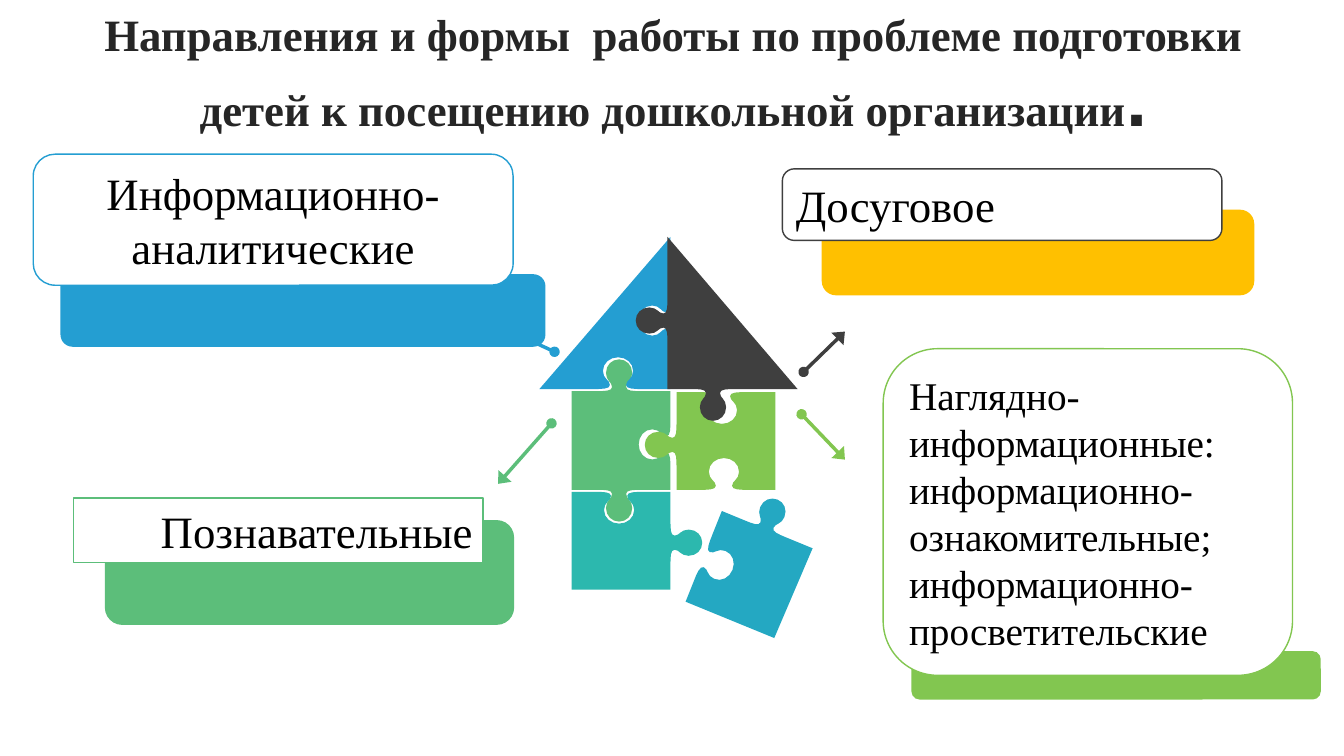
from dataclasses import dataclass
from math import hypot

from lxml.etree import SubElement
from pptx import Presentation
from pptx.dml.color import RGBColor
from pptx.enum.shapes import MSO_CONNECTOR, MSO_SHAPE
from pptx.enum.text import MSO_ANCHOR, MSO_AUTO_SIZE, PP_ALIGN
from pptx.oxml.ns import qn
from pptx.util import Inches, Pt


@dataclass(frozen=True)
class Theme:
    font: str = "Times New Roman"
    dot_font: str = "Arial"
    head: int = 32
    body: int = 28
    dot: int = 54
    ink: str = "262626"
    black: str = "000000"
    white: str = "FFFFFF"
    blue: str = "249ED2"
    dark: str = "3F3F3F"
    green: str = "5CBE7A"
    lime: str = "82C650"
    teal: str = "2CB8AE"
    aqua: str = "24A8C2"
    gold: str = "FFC000"


CELL = Inches(0.1)
HALF = [
    ((-2.2, 0), (-1.4, 0), (-0.7, 0), (-0.7, 0.4)),
    ((-0.7, 0.4), (-0.7, 0.9), (-1.3, 1), (-1.3, 1.8)),
    ((-1.3, 1.8), (-1.3, 2.6), (-0.7, 3.15), (0, 3.15)),
]
STEPS = 4


def curve(a, b, c, d):
    for i in range(STEPS):
        t = i / STEPS
        s = 1 - t
        yield tuple(
            s**3 * p + 3 * s * s * t * q + 3 * s * t * t * r + t**3 * e
            for p, q, r, e in zip(a, b, c, d)
        )


LEFT = [point for part in HALF for point in curve(*part)]
KNOB = LEFT + [HALF[-1][-1]] + [(-x, y) for x, y in reversed(LEFT)]


def box(x, y, wide, high):
    return [(x, y), (x + wide, y), (x + wide, y + high), (x, y + high)]


def outline(nodes, tabs):
    points = []
    for i, (x, y) in enumerate(nodes):
        points.append((x, y))
        if i not in tabs:
            continue
        share, side = tabs[i]
        end_x, end_y = nodes[(i + 1) % len(nodes)]
        size = hypot(end_x - x, end_y - y)
        dx, dy = (end_x - x) / size, (end_y - y) / size
        broad = 1 if side > 0 else 1.15
        for along, out in KNOB:
            run = share * size + along * broad
            rise = out * side
            points.append((x + dx * run + dy * rise, y + dy * run - dx * rise))
    return points


class Slide:
    def __init__(self, deck, theme):
        self.theme = theme
        self.slide = deck.slides.add_slide(deck.slide_layouts[5])
        self.shapes = self.slide.shapes

    def grid(self, *cells):
        return [round(cell * CELL) for cell in cells]

    def paint(self, shape, fill, line=None):
        shape.shadow.inherit = False
        shape.fill.solid()
        shape.fill.fore_color.rgb = RGBColor.from_string(fill)
        if line:
            shape.line.color.rgb = RGBColor.from_string(line)
            shape.line.width = Pt(1)
        else:
            shape.line.fill.background()

    def title(self, place, text, dot):
        theme = self.theme
        shape = self.shapes.title
        shape.left, shape.top, shape.width, shape.height = self.grid(*place)
        frame = shape.text_frame
        frame.word_wrap = True
        frame.auto_size = MSO_AUTO_SIZE.NONE
        frame.vertical_anchor = MSO_ANCHOR.MIDDLE
        para = frame.paragraphs[0]
        para.alignment = PP_ALIGN.CENTER
        para.line_spacing = 0.9
        para.space_before = Pt(10)
        para.font.bold = True
        para.font.color.rgb = RGBColor.from_string(theme.ink)
        for words, face, size in ((text, theme.font, theme.head), (dot, theme.dot_font, theme.dot)):
            run = para.add_run()
            run.text = words
            run.font.name = face
            run.font.size = Pt(size)

    def card(self, back, fill, front, line, text, size, align, bend=None):
        group = self.shapes.add_group_shape().shapes
        base = group.add_shape(MSO_SHAPE.ROUNDED_RECTANGLE, *self.grid(*back))
        self.paint(base, fill)
        face = group.add_shape(MSO_SHAPE.ROUNDED_RECTANGLE, *self.grid(*front))
        self.paint(face, self.theme.white, line)
        if bend is not None:
            face.adjustments[0] = bend
        frame = face.text_frame
        frame.word_wrap = True
        frame.vertical_anchor = MSO_ANCHOR.MIDDLE
        para = frame.paragraphs[0]
        para.text = text
        para.alignment = align
        para.font.name = self.theme.font
        para.font.size = Pt(size)
        para.font.color.rgb = RGBColor.from_string(self.theme.black)

    def piece(self, nodes, tabs, fill):
        points = [self.grid(*point) for point in outline(nodes, tabs)]
        form = self.shapes.build_freeform(*points[0], scale=1.0)
        form.add_line_segments(points[1:], close=True)
        self.paint(form.convert_to_shape(), fill)

    def arrow(self, start, end, color):
        link = self.shapes.add_connector(MSO_CONNECTOR.STRAIGHT, *self.grid(*start, *end))
        link.line.color.rgb = RGBColor.from_string(color)
        link.line.width = Pt(2.5)
        line = link.line._get_or_add_ln()
        SubElement(line, qn("a:headEnd"), type="oval")
        SubElement(line, qn("a:tailEnd"), type="triangle", w="lg", len="med")
        SubElement(link._element.spPr, qn("a:effectLst"))


def main():
    deck = Presentation()
    deck.slide_width = Inches(13.33)
    deck.slide_height = Inches(7.5)
    theme = Theme()
    page = Slide(deck, theme)

    page.title(
        (3.5, 3.75, 126.6, 7.9),
        "Направления и формы  работы по проблеме подготовки детей к посещению дошкольной организации",
        ".",
    )

    cards = [
        ((10.4, 51.6, 40.6, 10.4), theme.green, (7.3, 49.4, 40.6, 6.4), theme.green,
         "Познавательные", theme.head, PP_ALIGN.RIGHT, 0),
        ((90.4, 64.6, 40.6, 4.8), theme.lime, (87.6, 34.6, 40.6, 32.4), theme.lime,
         "Наглядно-информационные: информационно-ознакомительные; информационно-просветительские",
         theme.body, PP_ALIGN.LEFT),
        ((6, 27.2, 48.1, 7.2), theme.blue, (3.3, 15.3, 47.6, 13), theme.blue,
         "Информационно-аналитические", theme.head, PP_ALIGN.CENTER),
        ((81.5, 20.8, 42.9, 8.5), theme.gold, (77.6, 16.75, 43.6, 7.1), theme.dark,
         "Досуговое", theme.head, PP_ALIGN.LEFT),
    ]
    for card in cards:
        page.card(*card)

    tilted = [(71.6, 50.7), (80.6, 54.4), (76.8, 63.3), (68, 59.7)]
    blue_roof = [(66.5, 23.5), (66.5, 38.6), (53.5, 38.6)]
    dark_roof = [(66.2, 23.5), (79.1, 38.6), (66.2, 38.6)]
    pieces = [
        (box(56.7, 38.8, 9.8, 9.8), {0: (0.48, 1), 1: (0.54, -1), 2: (0.52, 1)}, theme.green),
        (tilted, {0: (0.48, 1), 3: (0.48, -1)}, theme.aqua),
        (box(67.1, 38.9, 9.8, 9.7), {0: (0.46, -1), 2: (0.52, -1), 3: (0.46, 1)}, theme.lime),
        (box(56.7, 48.8, 9.8, 9.7), {0: (0.48, -1), 1: (0.52, 1)}, theme.teal),
        (blue_roof, {0: (0.55, -1), 1: (0.4, -1)}, theme.blue),
        (dark_roof, {1: (0.65, 1), 2: (0.45, 1)}, theme.dark),
    ]
    for piece in pieces:
        page.piece(*piece)

    arrows = [
        ((79.7, 36.9), (83.8, 32.9), theme.dark),
        ((79.5, 41.1), (83.8, 45.6), theme.lime),
        ((55, 34.9), (49.4, 32.3), theme.blue),
        ((54.7, 42), (49.4, 48), theme.green),
    ]
    for arrow in arrows:
        page.arrow(*arrow)

    deck.save("out.pptx")


if __name__ == "__main__":
    main()
